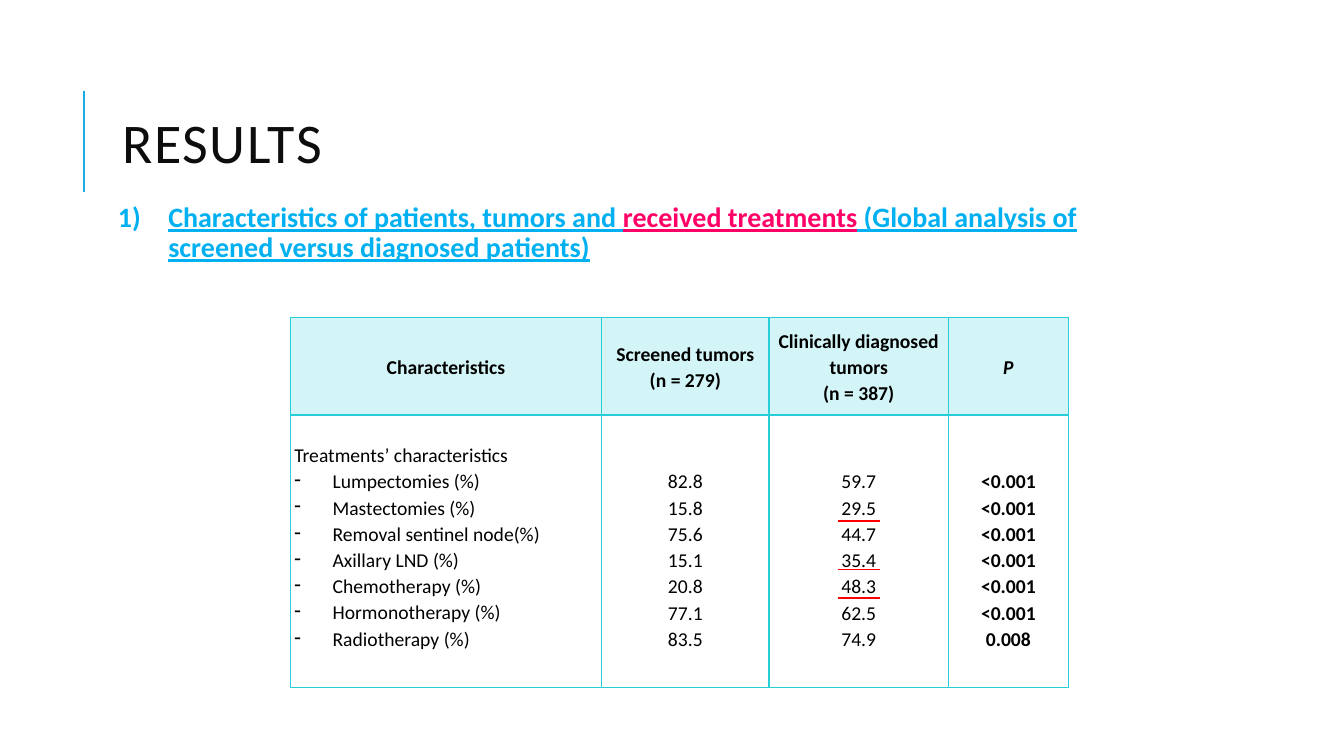
from dataclasses import dataclass
from typing import Optional

from lxml.etree import SubElement
from pptx import Presentation
from pptx.dml.color import RGBColor
from pptx.enum.shapes import MSO_CONNECTOR as Connector
from pptx.enum.text import MSO_ANCHOR as Anchor, PP_ALIGN as Align
from pptx.oxml import parse_xml
from pptx.oxml.ns import nsdecls, qn
from pptx.util import Inches, Pt

COLORS = {"accent": "1CADE4", "title": "0D0D0D", "heading": "00B0F0", "highlight": "FF0066",
          "border": "27CED7", "header": "D4F5F7", "body": "FFFFFF", "text": "000000", "mark": "FF0000"}
FONT = "Calibri"
GRID_COLUMNS, GRID_ROWS = 160, 90
SLIDE_HEIGHT = Inches(7.5)
UNIT = SLIDE_HEIGHT / GRID_ROWS
TEXT_LINE = 3.13  # grid rows taken by one line of table text


@dataclass(frozen=True)
class Run:
    text: str
    color: str


@dataclass(frozen=True)
class TableColumn:
    header: str
    width: float
    values: tuple[str, ...]
    skipped_lines: int = 2
    bold: bool = False
    italic_header: bool = False


@dataclass(frozen=True)
class Rule:
    start: tuple[float, float]
    end: tuple[float, float]
    color: str
    points: float


HEADING = [Run("Characteristics of patients, tumors and ", "heading"),
           Run("received treatments", "highlight"),
           Run(" (Global analysis of screened versus diagnosed patients)", "heading")]
TREATMENTS = ("Lumpectomies (%)", "Mastectomies (%)", "Removal sentinel node(%)", "Axillary LND (%)",
              "Chemotherapy (%)", "Hormonotherapy (%)", "Radiotherapy (%)")
TABLE_COLUMNS = [
    TableColumn("Characteristics", 37.08, ("Treatments’ characteristics", *TREATMENTS), skipped_lines=1),
    TableColumn("Screened tumors\n(n = 279)", 19.92,
                ("82.8", "15.8", "75.6", "15.1", "20.8", "77.1", "83.5")),
    TableColumn("Clinically diagnosed tumors\n(n = 387)", 21.36,
                ("59.7", "29.5", "44.7", "35.4", "48.3", "62.5", "74.9")),
    TableColumn("P", 14.28, ("<0.001",) * 6 + ("0.008",), bold=True, italic_header=True),
]
ROW_HEIGHTS = (11.64, 32.4)
RULES = [Rule((10, 10.8), (10, 22.8), "accent", 1.5)]
MARKS = [Rule((99.72, y), (104.76, y), "mark", 1.25) for y in (62.04, 67.8, 71.16)]


def grid(*counts: float) -> list[int]:
    """Turn counts of grid columns or rows into lengths."""
    return [round(count * UNIT) for count in counts]


def rgb(name: str) -> RGBColor:
    return RGBColor.from_string(COLORS[name])


def write(frame, paragraphs: list[list[Run]], *, size: float, bold: bool = False, italic: bool = False,
          underline: bool = False, align: Align = Align.LEFT, spacing: float = 1.0, before: float = 0,
          tracking: float = 0) -> None:
    frame.word_wrap = True
    for index, runs in enumerate(paragraphs):
        paragraph = frame.paragraphs[0] if index == 0 else frame.add_paragraph()
        paragraph.alignment = align
        paragraph.line_spacing = spacing
        paragraph.space_before = Pt(before)
        for part in runs:
            run = paragraph.add_run()
            run.text = part.text
            font = run.font
            font.name, font.size = FONT, Pt(size)
            font.bold, font.italic, font.underline = bold, italic, underline
            font.color.rgb = rgb(part.color)
            if tracking:
                font._element.set("spc", str(round(tracking * 100)))


def add_bullet(paragraph, indent: float, tag: str, **attributes: str) -> None:
    properties = paragraph._p.get_or_add_pPr()
    properties.set("marL", str(Inches(indent)))
    properties.set("indent", str(-Inches(indent)))
    SubElement(properties, qn(tag), attributes)


def draw_rule(slide, rule: Rule) -> None:
    line = slide.shapes.add_connector(Connector.STRAIGHT, *grid(*rule.start, *rule.end))
    line.line.color.rgb = rgb(rule.color)
    line.line.width = Pt(rule.points)
    SubElement(line._element.spPr, qn("a:effectLst"))


def format_cell(cell, fill: str, anchor: Anchor, top: float, widths: dict[str, float]) -> None:
    """Set fill, anchor, margins and the border widths given by side."""
    cell.margin_left = cell.margin_right = Inches(0.04)
    cell.margin_top, cell.margin_bottom = grid(top, 0)
    cell.vertical_anchor = anchor
    cell.fill.solid()
    cell.fill.fore_color.rgb = rgb(fill)
    properties = cell._tc.get_or_add_tcPr()
    for index, (side, points) in enumerate(widths.items()):
        properties.insert(index, parse_xml(
            f'<a:ln{side} {nsdecls("a")} w="{Pt(points)}"><a:solidFill>'
            f'<a:srgbClr val="{COLORS["border"]}"/></a:solidFill></a:ln{side}>'))


def as_paragraphs(lines: tuple[str, ...] | list[str]) -> list[list[Run]]:
    return [[Run(line, "text")] for line in lines]


def draw_table(slide, left: float, top: float) -> None:
    width = sum(column.width for column in TABLE_COLUMNS)
    table = slide.shapes.add_table(len(ROW_HEIGHTS), len(TABLE_COLUMNS),
                                   *grid(left, top, width, sum(ROW_HEIGHTS))).table
    table.first_row = table.horz_banding = False
    for row, height in zip(table.rows, grid(*ROW_HEIGHTS)):
        row.height = height
    for index, column in enumerate(TABLE_COLUMNS):
        table.columns[index].width = grid(column.width)[0]
        header, body = table.cell(0, index), table.cell(1, index)
        format_cell(header, "header", Anchor.MIDDLE, 0, {"L": 1, "R": 1, "T": 1, "B": 2})
        format_cell(body, "body", Anchor.TOP, column.skipped_lines * TEXT_LINE,
                    {"L": 1, "R": 1, "T": 2, "B": 1})
        write(header.text_frame, as_paragraphs(column.header.split("\n")), size=14, bold=True,
              italic=column.italic_header, align=Align.CENTER, spacing=1.1)
        write(body.text_frame, as_paragraphs(column.values), size=14, bold=column.bold,
              align=Align.LEFT if index == 0 else Align.CENTER, spacing=1.1)
    for paragraph in table.cell(1, 0).text_frame.paragraphs[1:]:
        add_bullet(paragraph, 0.38, "a:buChar", char="-")


def place_title(slide, text: str) -> None:
    title = slide.shapes.title
    title.left, title.top, title.width, title.height = grid(13.44, 7.68, 127.56, 19.68)
    title.text_frame.vertical_anchor = Anchor.MIDDLE
    write(title.text_frame, [[Run(text, "title")]], size=40, spacing=0.8, tracking=1)


def place_heading(slide, runs: list[Run], margin: Optional[float] = 0.05) -> None:
    frame = slide.shapes.add_textbox(*grid(13.44, 23.64, 127.56, 12.36)).text_frame
    frame.margin_left = frame.margin_right = frame.margin_top = frame.margin_bottom = Inches(margin)
    write(frame, [runs], size=20, bold=True, underline=True, spacing=0.9, before=10)
    add_bullet(frame.paragraphs[0], 0.5, "a:buAutoNum", type="arabicParenR")


def main() -> None:
    deck = Presentation()
    deck.slide_width, deck.slide_height = grid(GRID_COLUMNS, GRID_ROWS)
    slide = deck.slides.add_slide(deck.slide_layouts[5])
    for rule in RULES:
        draw_rule(slide, rule)
    place_title(slide, "RESULTS")
    place_heading(slide, HEADING)
    draw_table(slide, 34.56, 37.8)
    for mark in MARKS:
        draw_rule(slide, mark)
    deck.save("out.pptx")


if __name__ == "__main__":
    main()
